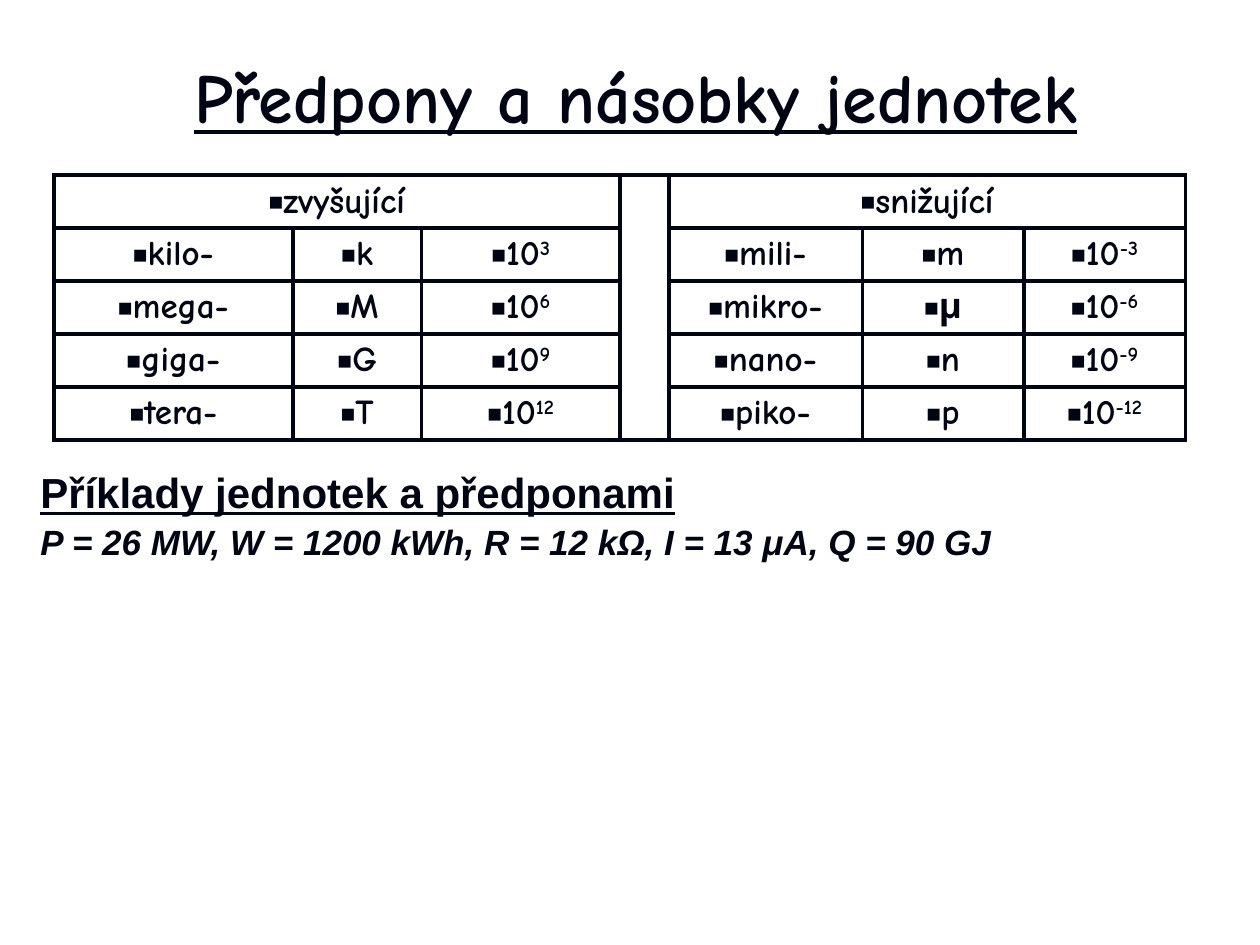
from dataclasses import dataclass
from itertools import product

from lxml.etree import SubElement
from pptx import Presentation
from pptx.dml.color import RGBColor
from pptx.enum.text import MSO_ANCHOR, MSO_AUTO_SIZE, PP_ALIGN
from pptx.oxml import parse_xml
from pptx.oxml.ns import nsdecls, qn
from pptx.util import Inches, Pt


@dataclass(frozen=True)
class Theme:
    ink: str = "000514"
    paper: str = "FFFFFF"
    hand: str = "Comic Neue"
    plain: str = "Arial"
    title: int = 40
    heading: int = 24
    body: int = 20
    border: float = 2.25
    bullet: str = "■"
    bullet_share: int = 70


THEME = Theme()
TITLE_BOX = (0.28, 0.28, 9.53, 0.95)
TABLE_BOX = (0.43, 1.39, 8.98, 2.1)
EXAMPLES_BOX = (0.28, 3.71, 9.53, 0.81)
COLUMNS = (1.89, 1.02, 1.57, 0.39, 1.53, 1.28, 1.28)
GAP_COLUMN = 3
GROUPS = (
    (0, "zvyšující", (("kilo-", "k", "3"), ("mega-", "M", "6"),
                      ("giga-", "G", "9"), ("tera-", "T", "12"))),
    (4, "snižující", (("mili-", "m", "-3"), ("mikro-", "μ", "-6"),
                      ("nano-", "n", "-9"), ("piko-", "p", "-12"))),
)


def add_span(para, text, size, font, underline=False, italic=False, raised=False):
    span = para.add_run()
    span.text = text
    span.font.size = Pt(size)
    span.font.name = font
    span.font.bold = True
    span.font.underline = underline
    span.font.italic = italic
    span.font.color.rgb = RGBColor.from_string(THEME.ink)
    if raised:
        span.font._element.set("baseline", "30000")


def add_bullet(para):
    settings = para._p.get_or_add_pPr()
    settings.set("marL", "0")
    settings.set("indent", "0")
    color = SubElement(settings, qn("a:buClr"))
    SubElement(color, qn("a:srgbClr"), val=THEME.ink)
    SubElement(settings, qn("a:buSzPct"), val=str(THEME.bullet_share * 1000))
    SubElement(settings, qn("a:buFont"), typeface=THEME.plain)
    SubElement(settings, qn("a:buChar"), char=THEME.bullet)


def add_borders(cell):
    settings = cell._tc.get_or_add_tcPr()
    for index, side in enumerate(("lnL", "lnR", "lnT", "lnB")):
        settings.insert(index, parse_xml(
            f'<a:{side} {nsdecls("a")} w="{Pt(THEME.border)}"><a:solidFill>'
            f'<a:srgbClr val="{THEME.ink}"/></a:solidFill></a:{side}>'))


def fill_cell(cell, text, power=None):
    para = cell.text_frame.paragraphs[0]
    para.alignment = PP_ALIGN.CENTER
    add_bullet(para)
    add_span(para, text, THEME.body, THEME.hand)
    if power:
        add_span(para, power, THEME.body, THEME.hand, raised=True)


def place_title(page, box):
    title = page.shapes.title
    title.left, title.top, title.width, title.height = map(Inches, box)
    frame = title.text_frame
    frame.auto_size = MSO_AUTO_SIZE.NONE
    frame.vertical_anchor = MSO_ANCHOR.MIDDLE
    para = frame.paragraphs[0]
    para.alignment = PP_ALIGN.CENTER
    add_span(para, "Předpony a násobky jednotek", THEME.title, THEME.hand, underline=True)


def place_prefix_table(page, box):
    row_count = 1 + len(GROUPS[0][2])
    table = page.shapes.add_table(row_count, len(COLUMNS), *map(Inches, box)).table
    table.first_row = table.horz_banding = False
    for column, share in zip(table.columns, COLUMNS):
        column.width = Inches(box[2] * share / sum(COLUMNS))
    for row, column in product(range(row_count), range(len(COLUMNS))):
        cell = table.cell(row, column)
        cell.vertical_anchor = MSO_ANCHOR.MIDDLE
        cell.fill.background()
        add_borders(cell)
    table.cell(0, GAP_COLUMN).merge(table.cell(row_count - 1, GAP_COLUMN))
    for start, heading, prefixes in GROUPS:
        table.cell(0, start).merge(table.cell(0, start + 2))
        fill_cell(table.cell(0, start), heading)
        for row, (prefix, symbol, power) in enumerate(prefixes, 1):
            fill_cell(table.cell(row, start), prefix)
            fill_cell(table.cell(row, start + 1), symbol)
            fill_cell(table.cell(row, start + 2), "10", power)


def place_examples(page, box):
    frame = page.shapes.add_textbox(*map(Inches, box)).text_frame
    frame.word_wrap = True
    frame.auto_size = MSO_AUTO_SIZE.SHAPE_TO_FIT_TEXT
    frame.margin_left = frame.margin_right = Inches(0.04)
    frame.margin_top = frame.margin_bottom = Inches(0.04)
    heading, examples = frame.paragraphs[0], frame.add_paragraph()
    for para, size in ((heading, THEME.heading), (examples, THEME.body)):
        para.line_spacing = 0.9
        para.space_before = Pt(size * 0.2)
    add_span(heading, "Příklady jednotek a předponami", THEME.heading, THEME.plain,
             underline=True)
    add_span(examples, "P = 26 MW, W = 1200 kWh, R = 12 kΩ, I = 13 μA, Q = 90 GJ",
             THEME.body, THEME.plain, italic=True)


def main():
    deck = Presentation()
    deck.slide_width, deck.slide_height = Inches(10), Inches(7.5)
    page = deck.slides.add_slide(deck.slide_layouts.get_by_name("Title Only"))
    page.background.fill.solid()
    page.background.fill.fore_color.rgb = RGBColor.from_string(THEME.paper)
    place_title(page, TITLE_BOX)
    place_prefix_table(page, TABLE_BOX)
    place_examples(page, EXAMPLES_BOX)
    deck.save("out.pptx")


if __name__ == "__main__":
    main()
